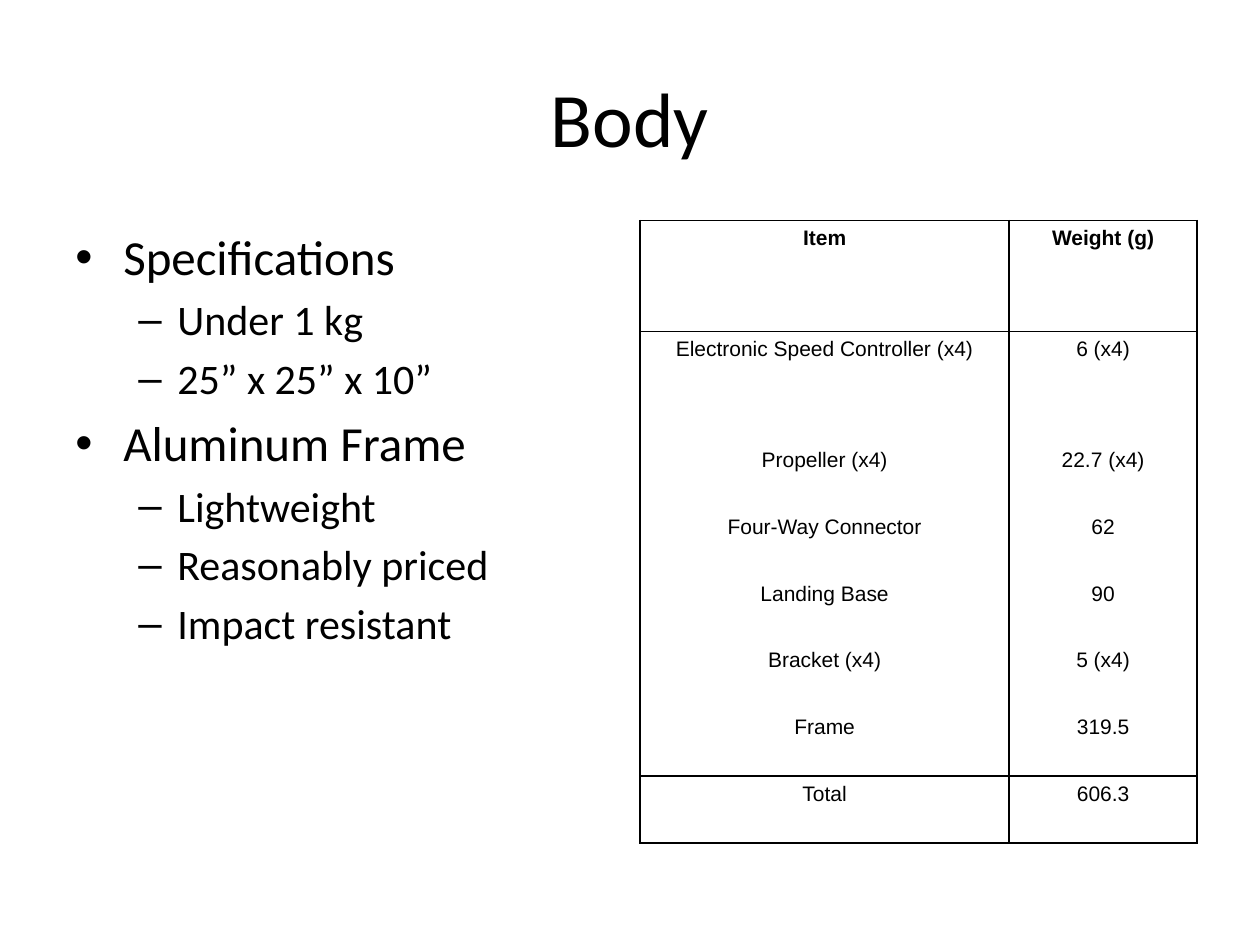
from lxml.etree import SubElement
from pptx import Presentation
from pptx.dml.color import RGBColor
from pptx.enum.text import MSO_ANCHOR, PP_ALIGN
from pptx.oxml.ns import qn
from pptx.util import Inches, Pt

BLACK = "000000"
POINTS = [
    (0, "Specifications"),
    (1, "Under 1 kg"),
    (1, "25” x 25” x 10”"),
    (0, "Aluminum Frame"),
    (1, "Lightweight"),
    (1, "Reasonably priced"),
    (1, "Impact resistant"),
]
LEVELS = [("•", 0.38, 0.38, 28), ("–", 0.81, 0.31, 24)]
WEIGHTS = [
    ("Item", "Weight (g)"),
    ("Electronic Speed Controller (x4)", "6 (x4)"),
    ("Propeller (x4)", "22.7 (x4)"),
    ("Four-Way Connector", "62"),
    ("Landing Base", "90"),
    ("Bracket (x4)", "5 (x4)"),
    ("Frame", "319.5"),
    ("Total", "606.3"),
]


def color(code):
    return RGBColor.from_string(code)


def write(para, text, size=12, font="Calibri", bold=False, align=None):
    run = para.add_run()
    run.text = text
    run.font.size = Pt(size)
    run.font.name = font
    run.font.bold = bold
    run.font.color.rgb = color(BLACK)
    para.alignment = align


def add_box(slide, left, top, width, height, anchor=MSO_ANCHOR.TOP):
    box = slide.shapes.add_textbox(
        Inches(left), Inches(top), Inches(width), Inches(height))
    frame = box.text_frame
    frame.word_wrap = True
    frame.vertical_anchor = anchor
    return frame


def set_bullet(para, mark, left, hang):
    props = para._p.get_or_add_pPr()
    props.set("marL", str(Inches(left)))
    props.set("indent", str(-Inches(hang)))
    before = SubElement(props, qn("a:spcBef"))
    SubElement(before, qn("a:spcPct"), val="20000")
    SubElement(props, qn("a:buFont"), typeface="Arial")
    SubElement(props, qn("a:buChar"), char=mark)


def add_list(slide):
    frame = add_box(slide, 0.5, 1.75, 4.42, 4.95)
    for index, (level, text) in enumerate(POINTS):
        para = frame.add_paragraph() if index else frame.paragraphs[0]
        mark, left, hang, size = LEVELS[level]
        para.level = level
        set_bullet(para, mark, left, hang)
        write(para, text, size=size)


def set_border(cell, sides):
    props = cell._tc.get_or_add_tcPr()
    for side in "LRTB":
        width = Pt(1) if side in sides else 0
        line = SubElement(props, qn(f"a:ln{side}"), w=str(width))
        if width:
            fill = SubElement(line, qn("a:solidFill"))
            SubElement(fill, qn("a:srgbClr"), val=BLACK)
        else:
            SubElement(line, qn("a:noFill"))


def add_grid(slide):
    last = len(WEIGHTS) - 1
    table = slide.shapes.add_table(
        len(WEIGHTS), 2, Inches(5.08), Inches(1.75),
        Inches(4.42), Inches(4.95)).table
    table.horz_banding = False
    for column, width in zip(table.columns, (2.93, 1.49)):
        column.width = Inches(width)
    for row, values in enumerate(WEIGHTS):
        table.rows[row].height = Inches(0.88 if row < 2 else 0.53)
        sides = "LR"
        if row in (0, 1, last):
            sides += "T"
        if row in (0, last - 1, last):
            sides += "B"
        for col, text in enumerate(values):
            cell = table.cell(row, col)
            set_border(cell, sides)
            cell.fill.background()
            write(cell.text_frame.paragraphs[0], text, font="Arial",
                  bold=row == 0, align=PP_ALIGN.CENTER)


def main():
    deck = Presentation()
    deck.slide_width = Inches(10)
    deck.slide_height = Inches(7.5)
    slide = deck.slides.add_slide(deck.slide_layouts[6])
    title = add_box(slide, 0.5, 0.3, 9, 1.25, anchor=MSO_ANCHOR.MIDDLE)
    write(title.paragraphs[0], "Body", size=44, align=PP_ALIGN.CENTER)
    add_list(slide)
    add_grid(slide)
    deck.save("out.pptx")


if __name__ == "__main__":
    main()
